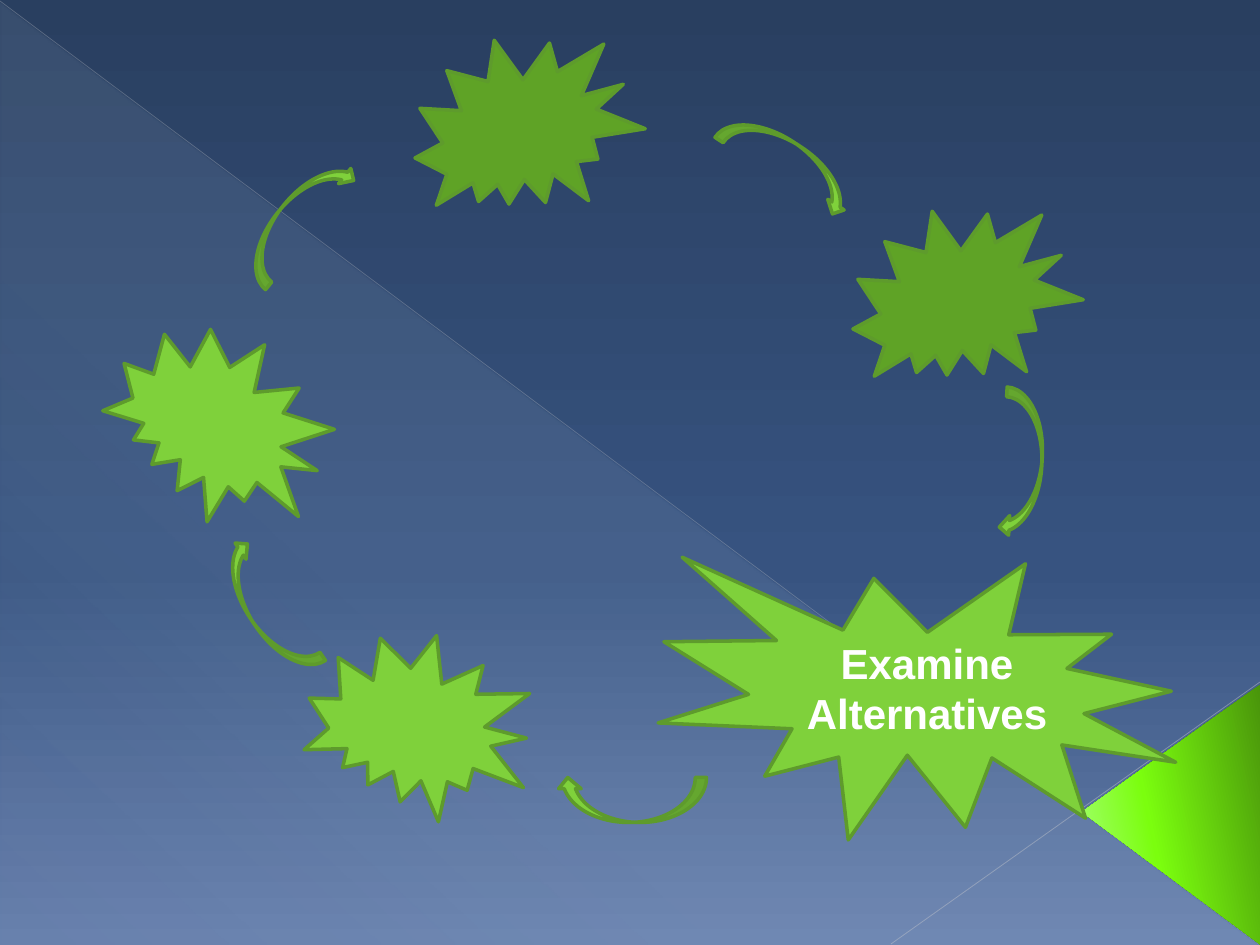
"""Build a cycle of five bursts joined by curved arrows, ending on Examine Alternatives."""
from lxml.etree import SubElement
from pptx import Presentation
from pptx.dml.color import RGBColor
from pptx.enum.shapes import MSO_CONNECTOR as Line, MSO_SHAPE as Shape
from pptx.enum.text import MSO_ANCHOR, MSO_AUTO_SIZE, PP_ALIGN
from pptx.oxml.ns import qn
from pptx.util import Pt

PX = 914400 / 126
SLIDE = (1260, 945)
THEME = {
    "burst": "7FD13B", "dark_burst": "5FA326", "outline": "5E9B2C", "outline_pt": 2,
    "text": "FFFFFF", "font": "Arial", "size": 24,
    "sky": ([(0, "293F60", 100), (60, "375380", 100), (100, "667FAC", 100)], 90),
    "haze": ([(0, "D6ECFF", 10), (70, "D6ECFF", 8), (100, "D6ECFF", 1)], 133),
    "corner": ([(0, "49940B", 100), (60, "7BFE0E", 100), (100, "A8FF7D", 100)], 258),
}
LABEL = ["Examine", "Alternatives"]
LABEL_BOX = (793, 631, 268, 115)
MAIN_BURST = ((659, 553, 522, 294), 6.3)
ARROW_SIZE, BURST_SIZE = (39, 150), (218, 210)
ARROWS = [
    ((769, 87), ARROW_SIZE, 303.1),
    ((278, 144), ARROW_SIZE, 218.9),
    ((248, 534), ARROW_SIZE, 146.2),
    ((609, 725), (45, 150), 90),
    ((1003, 388), ARROW_SIZE, 3.2),
]
BURSTS = [
    ((420, 23), 20.7, "dark_burst"),
    ((113, 324), 69.2, "burst"),
    ((314, 624), 50.6, "burst"),
    ((858, 194), 20.7, "dark_burst"),
]
RAYS = [
    ((0, 1, 1259, 944), "B7BCC5", 0.39, 35),
    ((1260, 682, 891, 944), "BFC3CB", 0.47, 45),
]


def emu(lengths):
    return [round(n * PX) for n in lengths]


def set_alpha(color, percent):
    SubElement(color, qn("a:alpha")).set("val", str(percent * 1000))


def set_gradient(owner, fill, name):
    stops, angle = THEME[name]
    fill.gradient()
    grad = owner.element.find(".//" + qn("a:gradFill"))
    gs_list = grad.find(qn("a:gsLst"))
    for gs in list(gs_list):
        gs_list.remove(gs)
    for position, value, alpha in stops:
        gs = SubElement(gs_list, qn("a:gs"))
        gs.set("pos", str(position * 1000))
        color = SubElement(gs, qn("a:srgbClr"))
        color.set("val", value)
        set_alpha(color, alpha)
    grad.find(qn("a:lin")).set("ang", str(angle * 60000))


def add_shape(s, kind, box, rotation=0):
    sp = s.shapes.add_shape(kind, *emu(box))
    sp.rotation = rotation
    sp.shadow.inherit = False
    return sp


def add_backdrop(s, kind, box, gradient, rotation=0):
    sp = add_shape(s, kind, box, rotation)
    set_gradient(sp, sp.fill, gradient)
    sp.line.fill.background()
    return sp


def add_green(s, kind, box, rotation, color="burst"):
    sp = add_shape(s, kind, box, rotation)
    sp.fill.solid()
    sp.fill.fore_color.rgb = RGBColor.from_string(THEME[color])
    sp.line.color.rgb = RGBColor.from_string(THEME["outline"])
    sp.line.width = Pt(THEME["outline_pt"])


def add_ray(s, ends, color, width, alpha):
    ray = s.shapes.add_connector(Line.STRAIGHT, *emu(ends))
    ray.line.color.rgb = RGBColor.from_string(color)
    ray.line.width = Pt(width)
    set_alpha(ray.element.find(".//" + qn("a:srgbClr")), alpha)
    SubElement(ray.element.spPr, qn("a:effectLst"))


def add_label(s):
    tf = s.shapes.add_textbox(*emu(LABEL_BOX)).text_frame
    frame = {"word_wrap": False, "auto_size": MSO_AUTO_SIZE.SHAPE_TO_FIT_TEXT,
             "vertical_anchor": MSO_ANCHOR.TOP}
    for key, value in frame.items():
        setattr(tf, key, value)
    tf.text = "\n".join(LABEL)
    font = {"name": THEME["font"], "size": Pt(THEME["size"]), "bold": True}
    for p in tf.paragraphs:
        p.alignment = PP_ALIGN.CENTER
        r = p.runs[0]
        for key, value in font.items():
            setattr(r.font, key, value)
        r.font.color.rgb = RGBColor.from_string(THEME["text"])


def main():
    prs = Presentation()
    prs.slide_width, prs.slide_height = emu(SLIDE)
    s = prs.slides.add_slide(prs.slide_layouts[6])
    set_gradient(s, s.background.fill, "sky")
    add_backdrop(s, Shape.RIGHT_TRIANGLE, (1, 3, 1257, 942), "haze")
    for ray in RAYS:
        add_ray(s, *ray)
    corner = add_backdrop(s, Shape.ISOSCELES_TRIANGLE, (1041, 725, 261, 179), "corner", 270)
    corner.adjustments[0] = 0.51
    add_green(s, Shape.EXPLOSION1, *MAIN_BURST)
    add_label(s)
    for at, size, rotation in ARROWS:
        add_green(s, Shape.CURVED_LEFT_ARROW, at + size, rotation)
    for at, rotation, color in BURSTS:
        add_green(s, Shape.EXPLOSION2, at + BURST_SIZE, rotation, color)
    prs.save("out.pptx")


if __name__ == "__main__":
    main()
